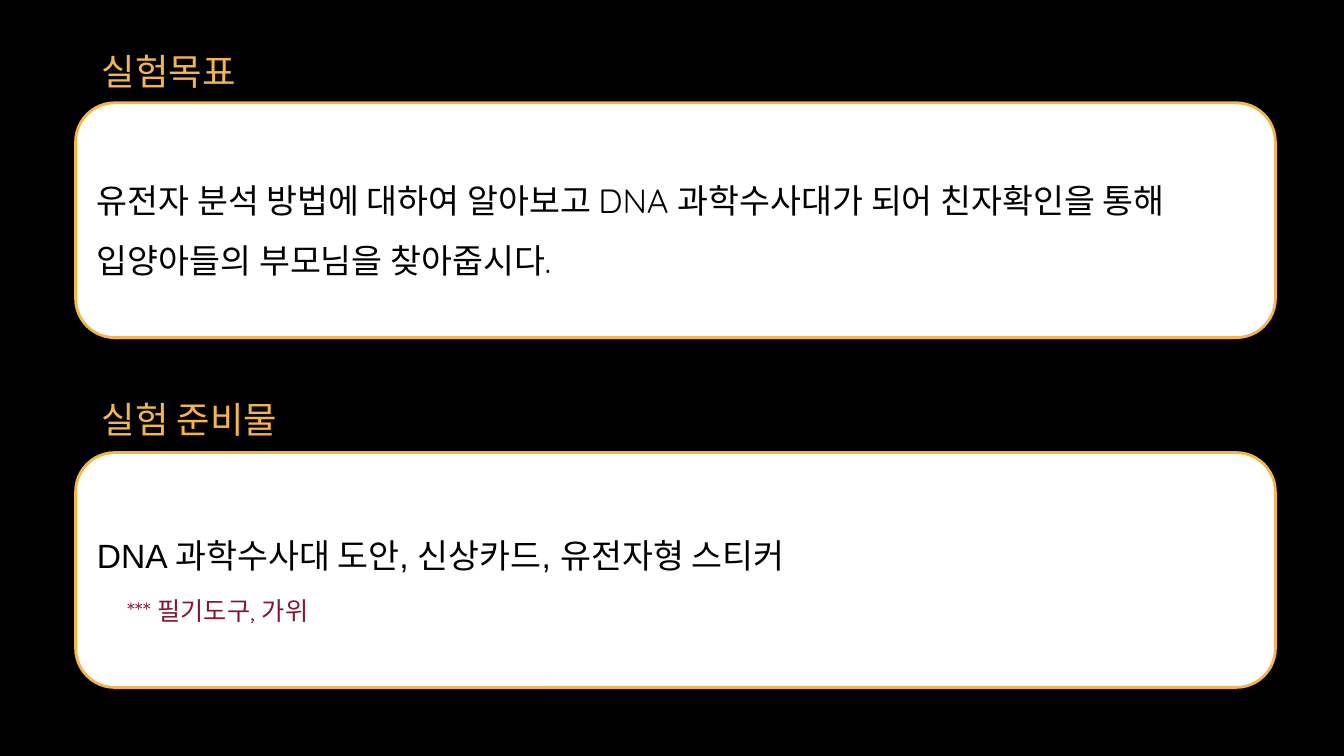
from dataclasses import dataclass

from pptx import Presentation
from pptx.dml.color import RGBColor
from pptx.enum.shapes import MSO_SHAPE
from pptx.enum.text import MSO_ANCHOR, MSO_AUTO_SIZE, PP_ALIGN
from pptx.util import Inches, Pt


@dataclass(frozen=True)
class Theme:
    background: RGBColor = RGBColor(0x00, 0x00, 0x00)
    accent: RGBColor = RGBColor(0xF4, 0xB5, 0x4B)
    panel: RGBColor = RGBColor(0xFF, 0xFF, 0xFF)
    text: RGBColor = RGBColor(0x00, 0x00, 0x00)
    note: RGBColor = RGBColor(0x81, 0x17, 0x31)
    display_font: str = "Quicksand"
    plain_font: str = "Arial"
    heading_size: Pt = Pt(26)
    text_size: Pt = Pt(24)
    note_size: Pt = Pt(18)
    outline: Pt = Pt(2)


THEME = Theme()


def style_paragraph(paragraph, font_name, size, color):
    paragraph.alignment = PP_ALIGN.LEFT
    paragraph.font.name = font_name
    paragraph.font.size = size
    paragraph.font.color.rgb = color


def format_heading(heading, text, top, width):
    """Place a title or text box as a section heading."""
    heading.left, heading.top = Inches(0.91), Inches(top)
    heading.width, heading.height = Inches(width), Inches(0.48)
    frame = heading.text_frame
    frame.text = text
    frame.word_wrap = True
    frame.auto_size = MSO_AUTO_SIZE.NONE
    frame.vertical_anchor = MSO_ANCHOR.TOP
    frame.margin_left = frame.margin_right = Inches(0.1)
    frame.margin_top = frame.margin_bottom = Inches(0.1)
    style_paragraph(frame.paragraphs[0], THEME.display_font,
                    THEME.heading_size, THEME.accent)


def add_panel(slide, top, text, font_name):
    panel = slide.shapes.add_shape(
        MSO_SHAPE.ROUNDED_RECTANGLE,
        Inches(0.75), Inches(top), Inches(11.9), Inches(2.33))
    panel.shadow.inherit = False
    panel.fill.solid()
    panel.fill.fore_color.rgb = THEME.panel
    panel.line.color.rgb = THEME.accent
    panel.line.width = THEME.outline
    frame = panel.text_frame
    frame.word_wrap = True
    frame.vertical_anchor = MSO_ANCHOR.MIDDLE
    frame.text = text
    frame.paragraphs[0].line_spacing = 1.5
    style_paragraph(frame.paragraphs[0], font_name, THEME.text_size, THEME.text)
    return panel


def add_note(panel, text):
    """Append a smaller, indented line to a panel."""
    note = panel.text_frame.add_paragraph()
    note.text = text
    note.line_spacing = 1.65
    style_paragraph(note, THEME.display_font, THEME.note_size, THEME.note)
    properties = note._p.get_or_add_pPr()
    properties.set("marL", str(Inches(0.3)))
    properties.set("indent", "0")


def main():
    presentation = Presentation()
    presentation.slide_width = Inches(13.33)
    presentation.slide_height = Inches(7.5)
    slide = presentation.slides.add_slide(presentation.slide_layouts[5])
    slide.background.fill.solid()
    slide.background.fill.fore_color.rgb = THEME.background

    format_heading(slide.shapes.title, "실험목표", 0.39, 1.96)
    add_panel(slide, 1.02,
              "유전자 분석 방법에 대하여 알아보고 DNA 과학수사대가 되어 "
              "친자확인을 통해 입양아들의 부모님을 찾아줍시다.",
              THEME.display_font)

    materials_heading = slide.shapes.add_textbox(0, 0, 0, 0)
    format_heading(materials_heading, "실험 준비물", 3.84, 2.3)
    materials = add_panel(slide, 4.49,
                          "DNA 과학수사대 도안, 신상카드, 유전자형 스티커",
                          THEME.plain_font)
    add_note(materials, "*** 필기도구, 가위")

    presentation.save("out.pptx")


if __name__ == "__main__":
    main()
